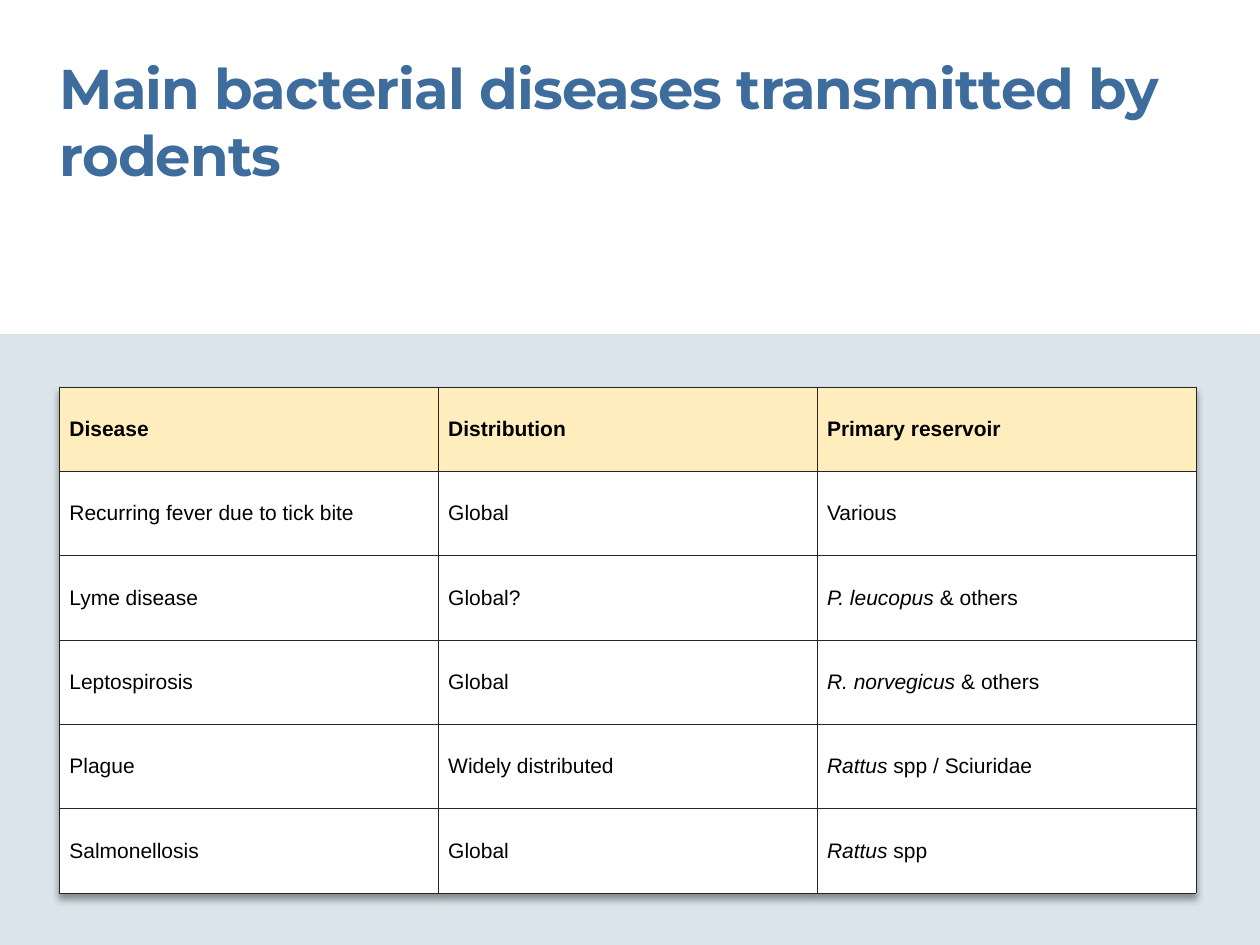
from lxml.etree import SubElement
from pptx import Presentation
from pptx.dml.color import RGBColor
from pptx.enum.shapes import MSO_SHAPE
from pptx.enum.text import MSO_ANCHOR
from pptx.oxml import parse_xml
from pptx.oxml.ns import qn
from pptx.util import Cm, Pt

TITLE = "Main bacterial diseases transmitted by rodents"
HEADER = ("Disease", "Distribution", "Primary reservoir")
# Each reservoir is an italic species name followed by plain text.
ROWS = [
    ("Recurring fever due to tick bite", "Global", ("", "Various")),
    ("Lyme disease", "Global?", ("P. leucopus", " & others")),
    ("Leptospirosis", "Global", ("R. norvegicus", " & others")),
    ("Plague", "Widely distributed", ("Rattus", " spp / Sciuridae")),
    ("Salmonellosis", "Global", ("Rattus", " spp")),
]

WHITE = RGBColor(0xFF, 0xFF, 0xFF)
BLACK = RGBColor(0x00, 0x00, 0x00)
BLUE = RGBColor(0x3D, 0x6C, 0x9D)
PALE_BLUE = RGBColor(0xDB, 0xE4, 0xEA)
CREAM = RGBColor(0xFF, 0xED, 0xBD)
BORDER = RGBColor(0x26, 0x26, 0x26)

SLIDE_W, SLIDE_H = Cm(25.4), Cm(19.05)
LEFT, WIDTH = Cm(1.2), Cm(22.91)
BAND_TOP = Cm(6.73)
TABLE_TOP, ROW_H = Cm(7.8), Cm(1.7)

SHADOW = (
    '<a:effectLst xmlns:a="http://schemas.openxmlformats.org/drawingml/2006/main">'
    '<a:outerShdw blurRad="50800" dist="38100" dir="5400000" algn="t" rotWithShape="0">'
    '<a:srgbClr val="000000"><a:alpha val="40000"/></a:srgbClr>'
    '</a:outerShdw></a:effectLst>'
)


def add_text(p, text, size=12, font="Arial", color=BLACK, bold=False, italic=False, spacing=None):
    r = p.add_run()
    r.text = text
    r.font.size = Pt(size)
    r.font.name = font
    r.font.color.rgb = color
    r.font.bold = bold
    r.font.italic = italic
    if spacing is not None:
        r.font._element.set("spc", str(int(spacing * 100)))


def add_borders(cell):
    tc_pr = cell._tc.get_or_add_tcPr()
    for i, side in enumerate(("lnL", "lnR", "lnT", "lnB")):
        ln = SubElement(tc_pr, qn(f"a:{side}"), w=str(Pt(0.5)))
        fill = SubElement(ln, qn("a:solidFill"))
        SubElement(fill, qn("a:srgbClr"), val=str(BORDER))
        tc_pr.insert(i, ln)


def fill_cell(cell, content, header):
    cell.fill.solid()
    cell.fill.fore_color.rgb = CREAM if header else WHITE
    cell.vertical_anchor = MSO_ANCHOR.MIDDLE
    cell.margin_left = cell.margin_right = Cm(0.2)
    cell.margin_top = cell.margin_bottom = Cm(0.13)
    add_borders(cell)
    species, plain = content if isinstance(content, tuple) else ("", content)
    p = cell.text_frame.paragraphs[0]
    if species:
        add_text(p, species, italic=True)
    add_text(p, plain, bold=header)


def add_band(s):
    band = s.shapes.add_shape(MSO_SHAPE.RECTANGLE, 0, BAND_TOP, SLIDE_W, SLIDE_H - BAND_TOP)
    band.shadow.inherit = False
    band.fill.solid()
    band.fill.fore_color.rgb = PALE_BLUE
    band.line.fill.background()


def add_title(s):
    tf = s.shapes.add_textbox(LEFT, Cm(1.07), WIDTH, Cm(2.74)).text_frame
    tf.word_wrap = True
    tf.margin_left = tf.margin_right = tf.margin_top = tf.margin_bottom = 0
    add_text(tf.paragraphs[0], TITLE, size=32, font="Montserrat", color=BLUE, bold=True, spacing=-0.5)


def add_disease_table(s):
    rows = [HEADER] + ROWS
    table = s.shapes.add_table(
        len(rows), len(HEADER), LEFT, TABLE_TOP, WIDTH, ROW_H * len(rows)
    ).table
    table.horz_banding = False
    table._tbl.tblPr.insert(0, parse_xml(SHADOW))
    for i, row in enumerate(rows):
        for j, content in enumerate(row):
            fill_cell(table.cell(i, j), content, header=i == 0)


def main():
    prs = Presentation()
    prs.slide_width, prs.slide_height = SLIDE_W, SLIDE_H
    s = prs.slides.add_slide(prs.slide_layouts[6])
    add_band(s)
    add_title(s)
    add_disease_table(s)
    prs.save("out.pptx")


if __name__ == "__main__":
    main()
